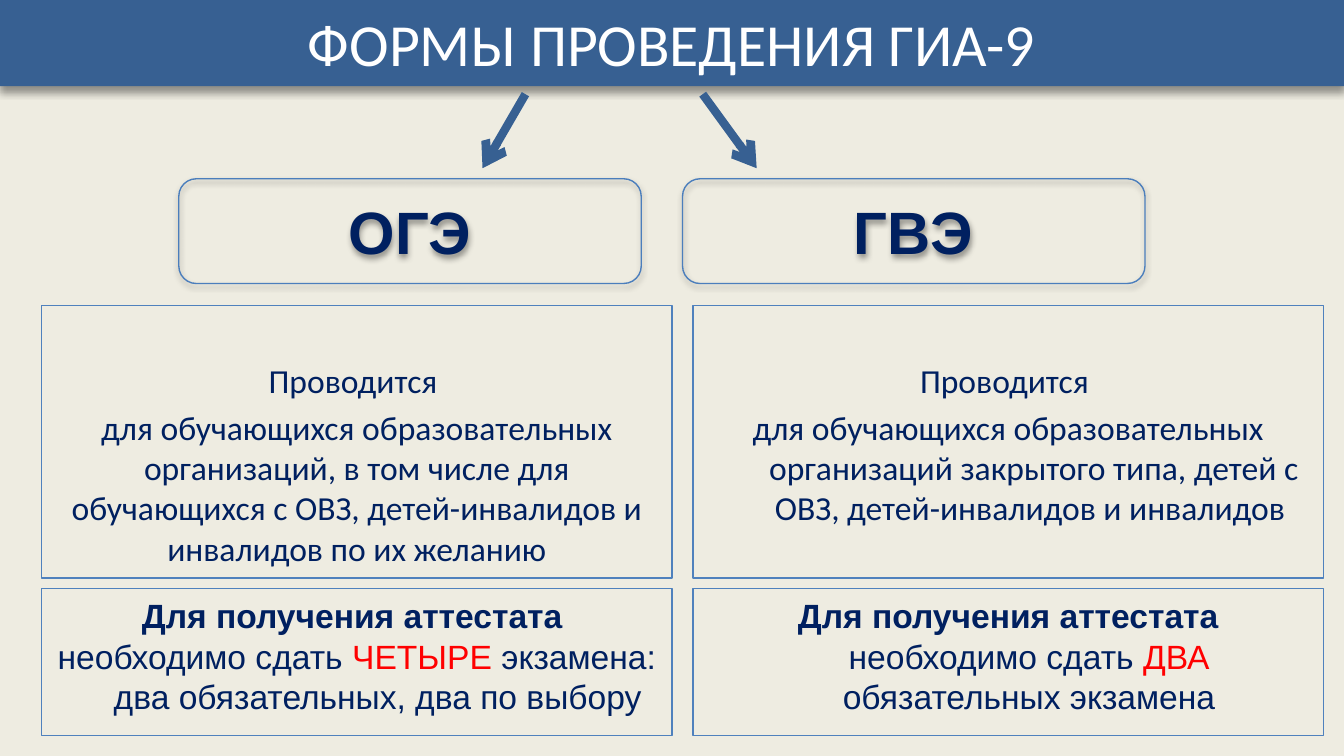
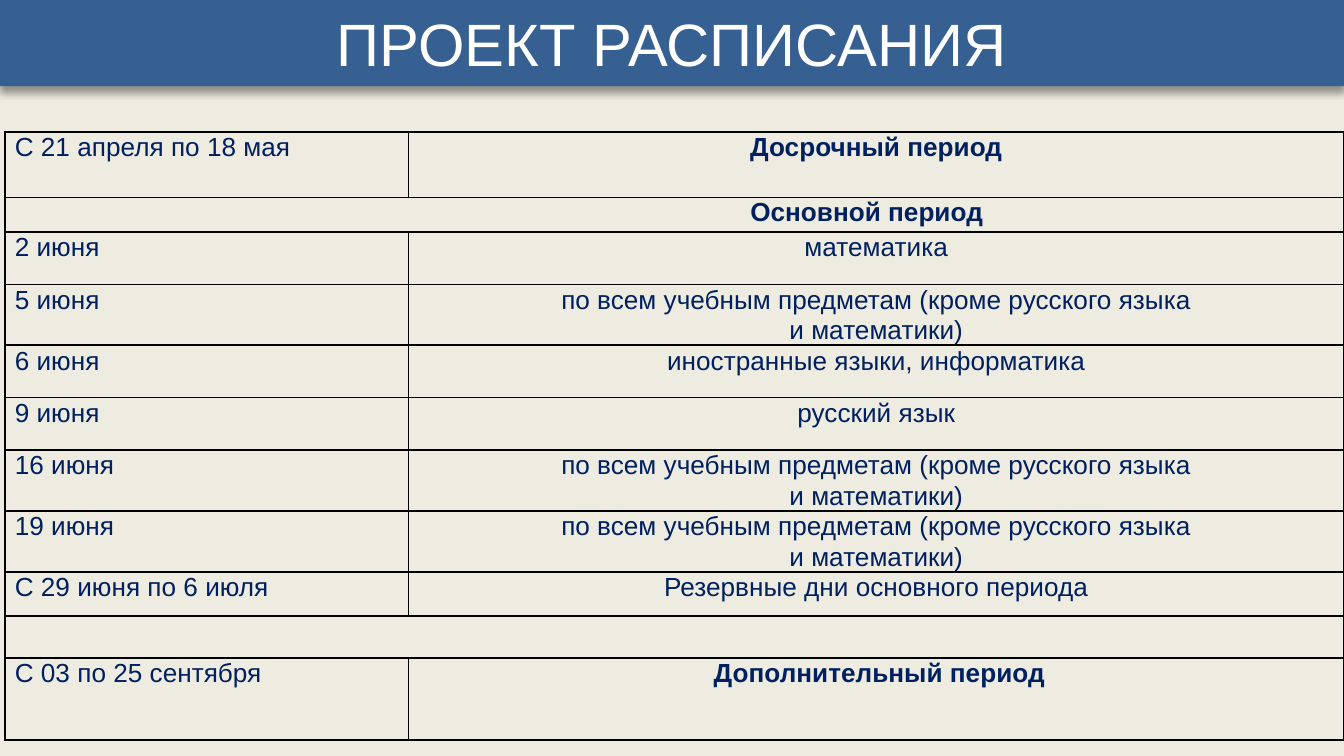
from dataclasses import dataclass
from typing import NamedTuple

from lxml import etree
from pptx import Presentation
from pptx import util as u
from pptx.dml import color as c
from pptx.enum import shapes, text
from pptx.oxml import ns

COLORS = {"paper": "EEECE1", "band": "376092", "frame": "4F81BD", "pill": "4B7EBC",
          "navy": "002060", "red": "FF0000", "white": "FFFFFF", "black": "000000"}
WIDTH, HEIGHT = u.Cm(25.4), u.Cm(14.29)
CENTER, LEFT = text.PP_ALIGN.CENTER, text.PP_ALIGN.LEFT


class Run(NamedTuple):
    text: str
    color: str = "navy"
    bold: bool = False


class Shadow(NamedTuple):
    alpha: int
    blur: float
    dist: float


class Box(NamedTuple):
    left: float
    top: float
    width: float
    height: float

    def cm(self) -> list[u.Cm]:
        return [u.Cm(v) for v in self]


@dataclass
class ExamForm:
    name: str
    pill_left: float
    box_left: float
    arrow: tuple[float, float]
    audience: str
    hanging: float
    certificate: list[list[Run]]


@dataclass
class Row:
    height: float
    date: str
    lines: tuple[str, ...] = ()
    bold: bool = False
    merged: bool = False
    indent: float = 0


BAND_SHADOW = Shadow(40, 4, 3)
PILL_SHADOW = Shadow(38, 3.1, 1.6)
CERTIFICATE = Run("Для получения аттестата ", bold=True)
MUST_PASS = Run("необходимо сдать ")

FORMS = [
    ExamForm("ОГЭ", 3.38, 0.79, (9.93, 9.12),
             "для обучающихся образовательных организаций, в том числе для обучающихся "
             "с ОВЗ, детей-инвалидов и инвалидов по их желанию", 0,
             [[CERTIFICATE],
              [MUST_PASS, Run("ЧЕТЫРЕ", "red"),
               Run(" экзамена: два обязательных, два по выбору")]]),
    ExamForm("ГВЭ", 12.9, 13.1, (13.28, 14.3),
             "для обучающихся образовательных организаций закрытого типа, детей с ОВЗ, "
             "детей-инвалидов и инвалидов ", 0.97,
             [[CERTIFICATE, MUST_PASS, Run("ДВА ", "red"),
               Run("обязательных экзамена")]]),
]

ALL_SUBJECTS = ("по всем учебным предметам (кроме русского языка", "и математики)")
SCHEDULE = [
    Row(1.24, "С 21 апреля по 18 мая", ("Досрочный период",), bold=True),
    Row(0.66, "", ("Основной период",), bold=True, merged=True, indent=7.26),
    Row(0.99, "2 июня", ("математика",)),
    Row(1.14, "5 июня", ALL_SUBJECTS),
    Row(0.99, "6 июня", ("иностранные языки, информатика",)),
    Row(0.99, "9 июня", ("русский язык",)),
    Row(1.14, "16 июня", ALL_SUBJECTS),
    Row(1.14, "19 июня", ALL_SUBJECTS),
    Row(0.84, "С 29 июня по 6 июля", ("Резервные дни основного периода",)),
    Row(0.79, "", merged=True),
    Row(1.55, "С 03 по 25 сентября", ("Дополнительный период",), bold=True, indent=0.12),
]


def rgb(name: str) -> c.RGBColor:
    return c.RGBColor.from_string(COLORS[name])


def apply(obj, **values) -> None:
    for name, value in values.items():
        setattr(obj, name, value)


def sub(parent, tag: str, **attrs):
    return etree.SubElement(parent, ns.qn(tag), {k: str(v) for k, v in attrs.items()})


def add_shadow(sp, shadow: Shadow) -> None:
    """Give the shape a soft black shadow straight below it."""
    sp.shadow.inherit = False
    effects = sp._element.spPr.find(ns.qn("a:effectLst"))
    outer = sub(effects, "a:outerShdw", blurRad=int(u.Pt(shadow.blur)),
                dist=int(u.Pt(shadow.dist)), dir=90 * 60000, rotWithShape=0)
    tint = sub(outer, "a:srgbClr", val=COLORS["black"])
    sub(tint, "a:alpha", val=shadow.alpha * 1000)


def write(tf, paragraphs: list[list[Run]], size: float = 18, font: str = "Arial",
          margin: float = 0, first: float = 0, **formats) -> None:
    """Fill a text frame; margin and first are paragraph indents in cm."""
    for i, runs in enumerate(paragraphs):
        p = tf.add_paragraph() if i else tf.paragraphs[0]
        apply(p, **{"alignment": CENTER, **formats})
        if i == 0:
            p.space_before = u.Pt(0)
        pPr = p._p.get_or_add_pPr()
        pPr.set("marL", str(int(u.Cm(margin))))
        pPr.set("indent", str(int(u.Cm(first))))
        for run in runs:
            r = p.add_run()
            r.text = run.text
            apply(r.font, size=u.Pt(size), name=font, bold=run.bold)
            r.font.color.rgb = rgb(run.color)


def add_titled_slide(prs, title: str, font: str):
    s = prs.slides.add_slide(prs.slide_layouts[5])
    sp = s.shapes.title
    apply(sp, left=0, top=0, width=WIDTH, height=u.Cm(1.63))
    sp.fill.solid()
    sp.fill.fore_color.rgb = rgb("band")
    add_shadow(sp, BAND_SHADOW)
    apply(sp.text_frame, auto_size=text.MSO_AUTO_SIZE.NONE, word_wrap=True)
    write(sp.text_frame, [[Run(title, "white")]], 32, font)
    return s


def add_frame(s, kind, box: Box, line: str, anchor=text.MSO_ANCHOR.TOP):
    sp = s.shapes.add_shape(kind, *box.cm())
    sp.shadow.inherit = False
    sp.fill.background()
    sp.line.color.rgb = rgb(line)
    sp.line.width = u.Pt(0.75)
    apply(sp.text_frame, word_wrap=True, vertical_anchor=anchor)
    return sp


def add_arrow(s, start: float, end: float) -> None:
    line = s.shapes.add_connector(shapes.MSO_CONNECTOR.STRAIGHT, u.Cm(start), u.Cm(1.78),
                                  u.Cm(end), u.Cm(3.18))
    line.line.color.rgb = rgb("band")
    line.line.width = u.Pt(4.5)
    sub(line.line._get_or_add_ln(), "a:tailEnd", type="arrow")
    sub(line._element.spPr, "a:effectLst")


def add_exam_form(s, form: ExamForm) -> None:
    rect = shapes.MSO_SHAPE.RECTANGLE
    add_arrow(s, *form.arrow)

    sp = add_frame(s, shapes.MSO_SHAPE.ROUNDED_RECTANGLE,
                   Box(form.pill_left, 3.38, 8.74, 1.98), "pill", text.MSO_ANCHOR.MIDDLE)
    add_shadow(sp, PILL_SHADOW)
    write(sp.text_frame, [[Run(form.name, bold=True)]], 32, margin=0.79, first=-0.79)

    sp = add_frame(s, rect, Box(form.box_left, 5.77, 11.91, 5.16), "frame")
    sp.text_frame.margin_top = u.Cm(1.03)
    write(sp.text_frame, [[Run("Проводится ")], [Run(form.audience)]], font="Calibri",
          margin=form.hanging, first=-form.hanging, space_before=u.Pt(3.6))

    sp = add_frame(s, rect, Box(form.box_left, 11.13, 11.91, 2.77), "frame")
    write(sp.text_frame, form.certificate, margin=0.79, first=-0.79)


def format_cell(cell) -> None:
    apply(cell, margin_left=0, margin_right=0, margin_top=0, margin_bottom=0)
    cell.fill.background()
    tcPr = cell._tc.get_or_add_tcPr()
    for i, side in enumerate(("a:lnL", "a:lnR", "a:lnT", "a:lnB")):
        ln = sub(tcPr, side, w=int(u.Pt(1)))
        sub(sub(ln, "a:solidFill"), "a:srgbClr", val=COLORS["black"])
        tcPr.insert(i, ln)


def add_schedule(s, rows: list[Row]) -> None:
    box = Box(0.1, 2.49, 25.3, sum(row.height for row in rows))
    table = s.shapes.add_table(len(rows), 2, *box.cm()).table
    apply(table, first_row=False, horz_banding=False)
    for column, width in zip(table.columns, (7.62, 17.68)):
        column.width = u.Cm(width)
    for i, row in enumerate(rows):
        table.rows[i].height = u.Cm(row.height)
        date, subject = table.cell(i, 0), table.cell(i, 1)
        format_cell(date)
        format_cell(subject)
        if row.merged:
            date.merge(subject)
            subject = date
        spacing = {"size": 14, "line_spacing": u.Pt(16.2 if i < 4 else 16.3)}
        if row.date:
            write(date.text_frame, [[Run(row.date)]], margin=0.18, alignment=LEFT, **spacing)
        write(subject.text_frame, [[Run(line, bold=row.bold)] for line in row.lines],
              margin=row.indent, **spacing)


def main() -> None:
    prs = Presentation()
    apply(prs, slide_width=WIDTH, slide_height=HEIGHT)
    background = prs.slide_master.background.fill
    background.solid()
    background.fore_color.rgb = rgb("paper")

    s = add_titled_slide(prs, "ФОРМЫ ПРОВЕДЕНИЯ ГИА-9", "Calibri")
    for form in FORMS:
        add_exam_form(s, form)

    s = add_titled_slide(prs, "ПРОЕКТ РАСПИСАНИЯ", "Arial")
    add_schedule(s, SCHEDULE)
    prs.save("out.pptx")


if __name__ == "__main__":
    main()
